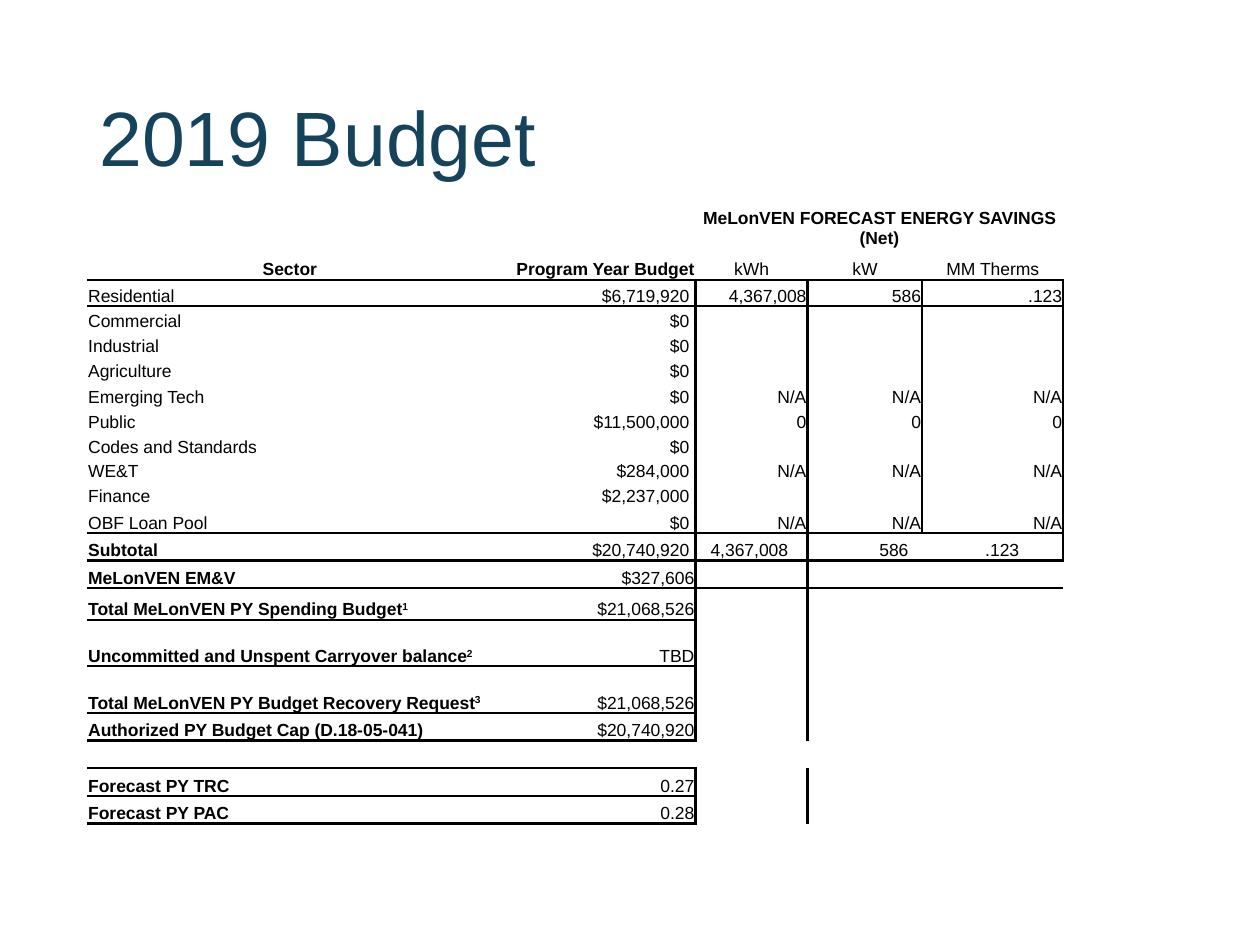
"""Build the 2019 Budget slide with its sector and forecast savings table."""
from lxml import etree
from pptx import Presentation
from pptx import util as u
from pptx.dml import color
from pptx.enum import text
from pptx.oxml import ns

COLORS = {"title": "15435C", "ink": "000000"}
FONT = "Arial"
NO_STYLE = "{2D5ABB26-0587-4C30-8999-92F81FD0307C}"
TITLE = "2019 Budget"
SAVINGS_HEADING = "MeLonVEN FORECAST ENERGY SAVINGS (Net)"
HEADINGS = ["Sector", "Program Year Budget", "kWh", "kW", "MM Therms"]
NOT_APPLICABLE = ["N/A"] * 3
SECTORS = [
    ["Residential", "$6,719,920", "4,367,008", "586", ".123"],
    ["Commercial", "$0"],
    ["Industrial", "$0"],
    ["Agriculture", "$0"],
    ["Emerging Tech", "$0", *NOT_APPLICABLE],
    ["Public", "$11,500,000", "0", "0", "0"],
    ["Codes and Standards", "$0"],
    ["WE&T", "$284,000", *NOT_APPLICABLE],
    ["Finance", "$2,237,000"],
    ["OBF Loan Pool", "$0", *NOT_APPLICABLE],
]
SUBTOTAL = ["Subtotal", "$20,740,920", "4,367,008", "586", ".123"]
TOTALS = [
    ["MeLonVEN EM&V", "$327,606"],
    ["Total MeLonVEN PY Spending Budget", "$21,068,526"],
    ["Uncommitted and Unspent Carryover balance", "TBD"],
    ["Total MeLonVEN PY Budget Recovery Request", "$21,068,526"],
    ["Authorized PY Budget Cap (D.18-05-041)", "$20,740,920"],
]
FORECASTS = [["Forecast PY TRC", "0.27"], ["Forecast PY PAC", "0.28"]]
ROWS = [[], ["", "", SAVINGS_HEADING], HEADINGS, *SECTORS, SUBTOTAL, *TOTALS, [], *FORECASTS]

COLUMN_WIDTHS = [3.22, 1.61, 0.89, 0.91, 1.12, 0.65]
ROW_HEIGHTS = [0.2, 0.36, 0.21, 0.21, *[0.2] * 6, 0.19, 0.2, 0.21,
               0.22, 0.22, 0.25, 0.37, 0.37, *[0.22] * 4]
HEADING_ROW = 2
SUBTOTAL_ROW = HEADING_ROW + len(SECTORS) + 1
GAP_ROW = SUBTOTAL_ROW + len(TOTALS) + 1
FOOTNOTES = {SUBTOTAL_ROW + 2: "1", SUBTOTAL_ROW + 3: "2", SUBTOTAL_ROW + 4: "3"}
SUBTOTAL_INDENTS = {2: 0.12, 3: 0.57, 4: 0.5}
EDGE = 0.01
BUDGET_INSET = 0.05


def line_below(row, column):
    """Tell whether a rule runs under this cell."""
    if row in (HEADING_ROW, SUBTOTAL_ROW - 1, SUBTOTAL_ROW):
        return column < 5
    return row > SUBTOTAL_ROW and column < 2


def line_right(row, column):
    """Tell whether a rule runs along the right of this cell."""
    if row <= HEADING_ROW or row == GAP_ROW:
        return False
    last_row = {1: len(ROWS), 2: SUBTOTAL_ROW - 1, 3: SUBTOTAL_ROW - 1, 4: SUBTOTAL_ROW}
    return row <= last_row.get(column, 0)


def draw_borders(cell, row, column):
    """Draw the rules that touch a cell."""
    sides = {"lnL": line_right(row, column - 1), "lnR": line_right(row, column),
             "lnT": line_below(row - 1, column), "lnB": line_below(row, column)}
    properties = cell._tc.get_or_add_tcPr()
    for side, shown in sides.items():
        if shown:
            line = etree.SubElement(properties, ns.qn("a:" + side), w=str(u.Pt(1.5)))
            fill = etree.SubElement(line, ns.qn("a:solidFill"))
            etree.SubElement(fill, ns.qn("a:srgbClr"), val=COLORS["ink"])
    cell.fill.background()


def style(span, size, ink, bold=False):
    """Set the font of a run."""
    span.font.name, span.font.size, span.font.bold = FONT, u.Pt(size), bold
    span.font.color.rgb = color.RGBColor.from_string(COLORS[ink])


def alignment(row, column):
    """Choose the alignment of a cell."""
    if row < HEADING_ROW or (row == HEADING_ROW and column != 1):
        return text.PP_ALIGN.CENTER
    if column == 0 or (row == SUBTOTAL_ROW and column > 1):
        return text.PP_ALIGN.LEFT
    return text.PP_ALIGN.RIGHT


def fill_cell(cell, row, column, words):
    """Write and format one cell."""
    draw_borders(cell, row, column)
    cell.margin_left = cell.margin_right = cell.margin_top = u.Inches(EDGE)
    cell.margin_bottom = 0
    if row != HEADING_ROW - 1:
        cell.vertical_anchor = text.MSO_ANCHOR.BOTTOM
    if column == 1 and HEADING_ROW < row <= SUBTOTAL_ROW:
        cell.margin_right = u.Inches(BUDGET_INSET)
    if row == SUBTOTAL_ROW and column in SUBTOTAL_INDENTS:
        cell.margin_left = u.Inches(SUBTOTAL_INDENTS[column])
    para = cell.text_frame.paragraphs[0]
    if not words:
        etree.SubElement(para._p, ns.qn("a:endParaRPr"), sz="800")
        return
    para.text = words
    para.alignment = alignment(row, column)
    bold = (row < HEADING_ROW or (row == HEADING_ROW and column < 2)
            or (row >= SUBTOTAL_ROW and column == 0))
    style(para.runs[0], 10, "ink", bold)
    if column == 0 and row in FOOTNOTES:
        mark = para.add_run()
        mark.text = FOOTNOTES[row]
        style(mark, 10, "ink", bold)
        mark.font._element.set("baseline", "30000")


def add_title(page):
    """Add the slide title."""
    box = page.shapes.add_textbox(*map(u.Inches, (0.69, 0.4, 8.62, 1.45)))
    frame = box.text_frame
    frame.word_wrap = True
    frame.vertical_anchor = text.MSO_ANCHOR.MIDDLE
    frame.text = TITLE
    frame.paragraphs[0].line_spacing = 0.9
    style(frame.paragraphs[0].runs[0], 44, "title")


def add_budget_table(page):
    """Add the budget table."""
    area = map(u.Inches, (0.69, 1.45, sum(COLUMN_WIDTHS), sum(ROW_HEIGHTS)))
    table = page.shapes.add_table(len(ROWS), len(COLUMN_WIDTHS), *area).table
    table.first_row = table.horz_banding = False
    table._tbl.tblPr.find(ns.qn("a:tableStyleId")).text = NO_STYLE
    for column, width in zip(table.columns, COLUMN_WIDTHS):
        column.width = u.Inches(width)
    for row, height in zip(table.rows, ROW_HEIGHTS):
        row.height = u.Inches(height)
    for row, values in enumerate(ROWS):
        for column in range(len(COLUMN_WIDTHS)):
            words = values[column] if column < len(values) else ""
            fill_cell(table.cell(row, column), row, column, words)
    table.cell(HEADING_ROW - 1, 2).merge(table.cell(HEADING_ROW - 1, 4))


def main():
    """Build and save the deck."""
    deck = Presentation()
    deck.slide_width, deck.slide_height = u.Inches(10), u.Inches(7.5)
    page = deck.slides.add_slide(deck.slide_layouts[6])
    add_title(page)
    add_budget_table(page)
    deck.save("out.pptx")


if __name__ == "__main__":
    main()
